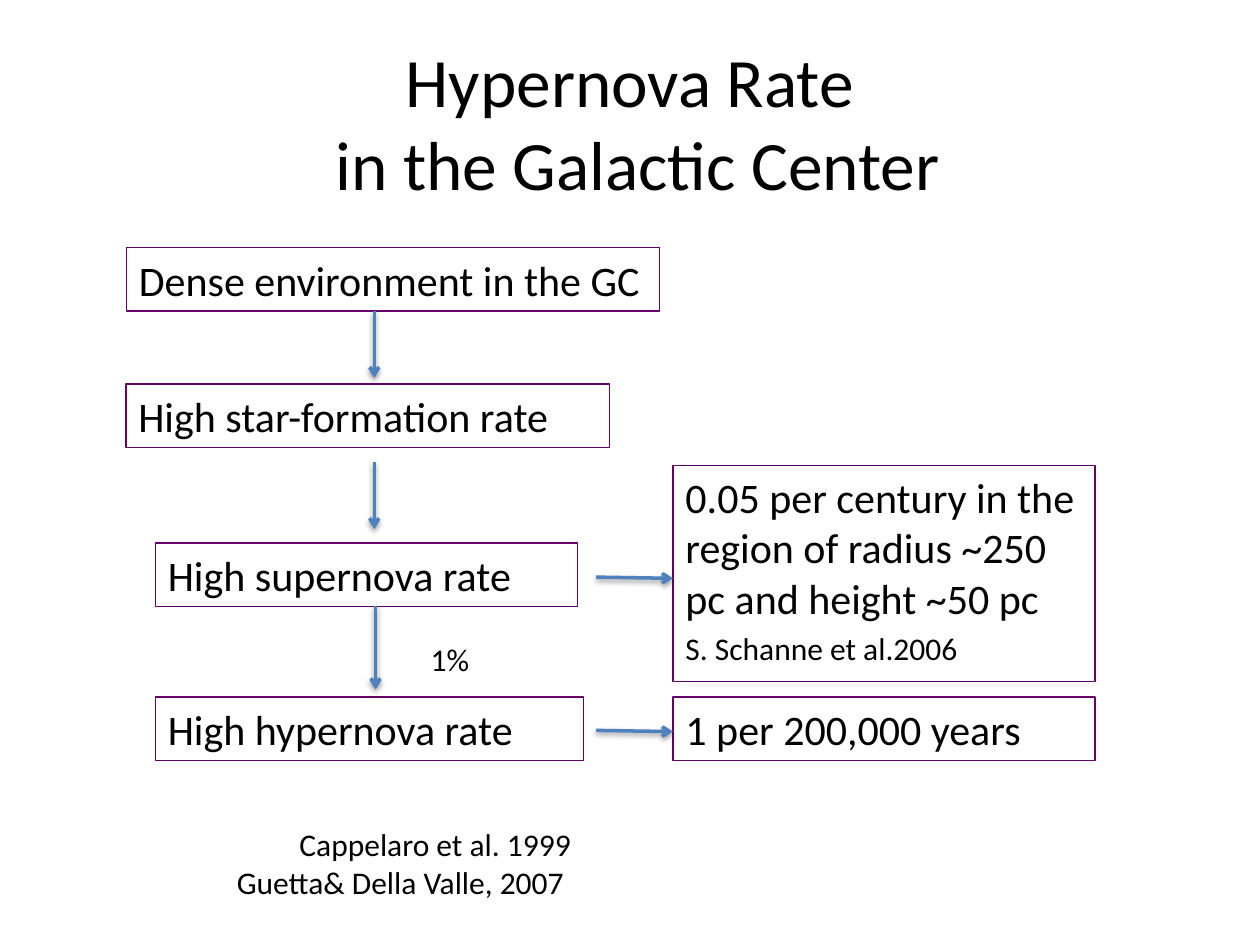
from lxml import etree
from pptx import Presentation
from pptx.dml.color import RGBColor
from pptx.enum.shapes import MSO_CONNECTOR, MSO_SHAPE
from pptx.enum.text import MSO_ANCHOR, PP_ALIGN
from pptx.oxml import parse_xml
from pptx.oxml.ns import qn
from pptx.util import Pt

BLACK = RGBColor(0x00, 0x00, 0x00)
PURPLE = RGBColor(0x66, 0x00, 0x66)
BLUE = RGBColor(0x4F, 0x81, 0xBD)
LEFT, CENTER, RIGHT = PP_ALIGN.LEFT, PP_ALIGN.CENTER, PP_ALIGN.RIGHT
TOP, MIDDLE = MSO_ANCHOR.TOP, MSO_ANCHOR.MIDDLE
RECT, LINE = MSO_SHAPE.RECTANGLE, MSO_CONNECTOR.STRAIGHT
SHADOW = (
    '<a:effectLst xmlns:a="http://schemas.openxmlformats.org/drawingml/2006/main">'
    '<a:outerShdw blurRad="39400" dist="20300" dir="5400000" rotWithShape="0">'
    '<a:srgbClr val="000000"><a:alpha val="38000"/></a:srgbClr>'
    '</a:outerShdw></a:effectLst>'
)

TALL = 36.2
ROWS = {"dense": 141.6, "star": 219.4, "super": 310.3, "hyper": 398.2}
STEM, SIDE, WIDE = 213.9, 384.6, 241.2
BOXES = [
    ("Dense environment in the GC", 72.3, ROWS["dense"], 304.6, TALL),
    ("High star-formation rate", 72, ROWS["star"], 276.5, TALL),
    ("High supernova rate", 88.8, ROWS["super"], WIDE, TALL),
    ("High hypernova rate", 88.8, ROWS["hyper"], 244.8, TALL),
    ("0.05 per century in the region of radius ~250 pc and height ~50 pc",
     SIDE, 265.8, WIDE, 123.8),
    ("1 per 200,000 years", SIDE, ROWS["hyper"], WIDE, TALL),
]
ARROWS = [
    (STEM, 177.8, STEM, 216),
    (STEM, 264.2, STEM, 302.4),
    (STEM + 0.7, 346.5, STEM + 0.7, 394),
    (340.6, 329.8, SIDE, 330.5),
    (340.6, 417.4, SIDE, 418.1),
]


def assign(item, style):
    """Set every attribute named in the style."""
    for name, value in style.items():
        setattr(item, name, value)


def write(shape, lines, size, align=LEFT, anchor=TOP, wrap=True):
    """Fill a shape with one paragraph per line."""
    frame = shape.text_frame
    assign(frame, {"word_wrap": wrap, "vertical_anchor": anchor})
    frame.text = lines
    for par in frame.paragraphs:
        par.alignment = align
        for run in par.runs:
            assign(run.font, {"name": "Calibri", "size": Pt(size)})
            run.font.color.rgb = BLACK


def add_label(slide, text, area, size=18, **style):
    """Place text without a frame."""
    write(slide.shapes.add_textbox(*map(Pt, area)), text, size, **style)


def add_box(slide, text, *area):
    """Place text in a thin purple frame."""
    box = slide.shapes.add_shape(RECT, *map(Pt, area))
    box.shadow.inherit = False
    box.fill.background()
    box.line.color.rgb = PURPLE
    box.line.width = Pt(0.75)
    write(box, text, 24)


def add_arrow(slide, *ends):
    """Draw a blue arrow with a soft shadow."""
    arrow = slide.shapes.add_connector(LINE, *map(Pt, ends))
    arrow.line.color.rgb = BLUE
    arrow.line.width = Pt(2)
    etree.SubElement(arrow.line._get_or_add_ln(), qn("a:tailEnd"), type="arrow")
    arrow._element.spPr.append(parse_xml(SHADOW))


def main():
    """Build the slide and save it."""
    deck = Presentation()
    assign(deck, {"slide_width": Pt(720), "slide_height": Pt(540)})
    slide = deck.slides.add_slide(deck.slide_layouts[6])
    add_label(slide, "Hypernova Rate\v in the Galactic Center",
              (36, 24.5, 648, 90), 39.6, align=CENTER, anchor=MIDDLE)
    for box in BOXES:
        add_box(slide, *box)
    for arrow in ARROWS:
        add_arrow(slide, *arrow)
    add_label(slide, "1%", (239, 362.2, 36.7, 29), wrap=False)
    add_label(slide, "S. Schanne et al.2006", (SIDE, 355.7, 171.4, 29), wrap=False)
    add_label(slide, "Cappelaro et al. 1999\n Guetta& Della Valle, 2007 ",
              (88.6, 468, 244.8, 51), align=RIGHT)
    deck.save("out.pptx")


if __name__ == "__main__":
    main()
